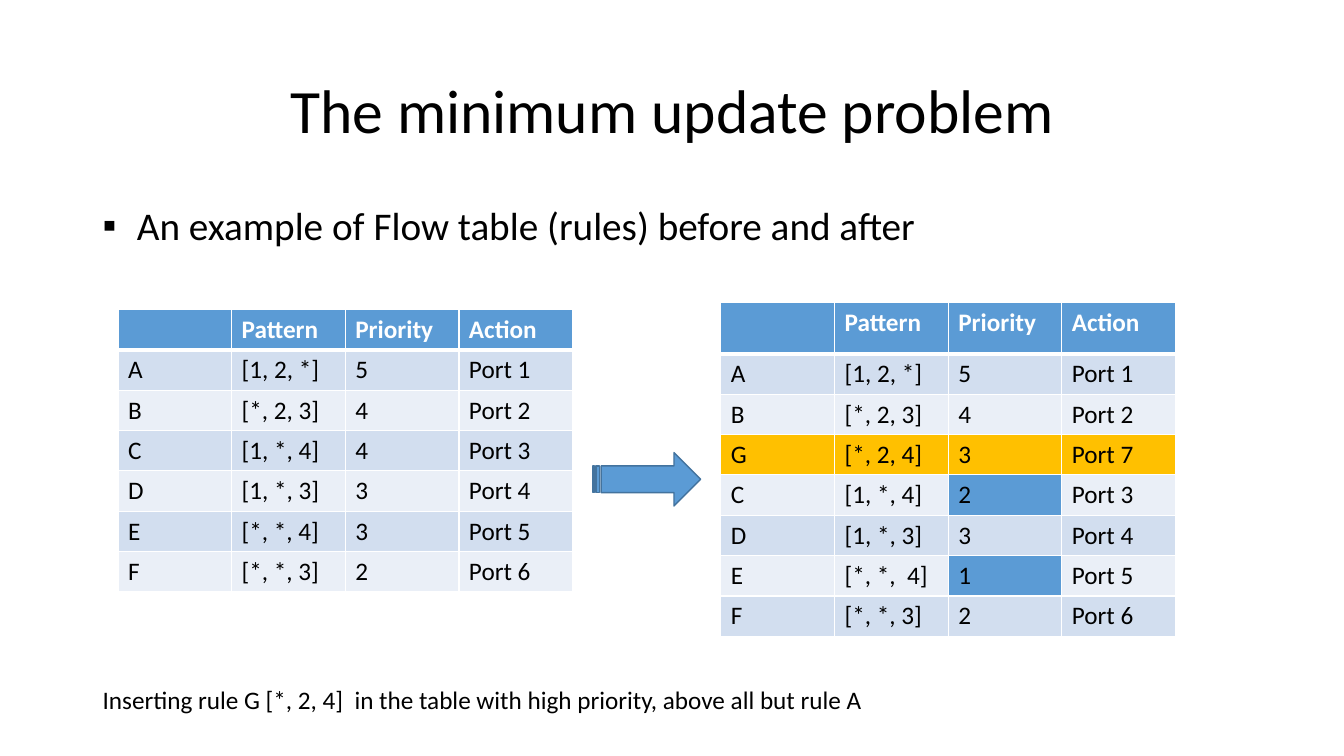
from lxml import etree
from pptx import Presentation
from pptx.dml.color import RGBColor
from pptx.enum.shapes import MSO_SHAPE
from pptx.enum.text import MSO_ANCHOR, PP_ALIGN
from pptx.oxml.ns import qn
from pptx.util import Inches, Pt

STRIPED_ARROW = MSO_SHAPE.STRIPED_RIGHT_ARROW
TOP, MIDDLE = MSO_ANCHOR.TOP, MSO_ANCHOR.MIDDLE
LEFT, CENTER = PP_ALIGN.LEFT, PP_ALIGN.CENTER
FONT = "Calibri"
COLORS = {
    "text": "000000",
    "white": "FFFFFF",
    "accent": "5B9BD5",
    "outline": "43739E",
    "odd": "D2DEEF",
    "even": "EAEFF7",
    "inserted": "FFC000",
}
MARGIN, CONTENT_WIDTH = 0.92, 11.5
TABLE_WIDTH, ROW_HEIGHT = 4.51, 0.4
HEADER = ("", "Pattern", "Priority", "Action")
BEFORE = (
    ("A", "[1, 2, *]", "5", "Port 1"),
    ("B", "[*, 2, 3]", "4", "Port 2"),
    ("C", "[1, *, 4]", "4", "Port 3"),
    ("D", "[1, *, 3]", "3", "Port 4"),
    ("E", "[*, *, 4]", "3", "Port 5"),
    ("F", "[*, *, 3]", "2", "Port 6"),
)
AFTER = (
    ("A", "[1, 2, *]", "5", "Port 1"),
    ("B", "[*, 2, 3]", "4", "Port 2"),
    ("G", "[*, 2, 4]", "3", "Port 7"),
    ("C", "[1, *, 4]", "2", "Port 3"),
    ("D", "[1, *, 3]", "3", "Port 4"),
    ("E", "[*, *,  4]", "1", "Port 5"),
    ("F", "[*, *, 3]", "2", "Port 6"),
)
INSERTED_RULE = "G"
CHANGED_PRIORITIES = ("C", "E")
PRIORITY_COLUMN = HEADER.index("Priority")


def color(name):
    """Return the named colour."""
    return RGBColor.from_string(COLORS[name])


def add_run(paragraph, text, size, color_name="text", bold=False):
    """Add one styled run to a paragraph."""
    run = paragraph.add_run()
    run.text = text
    run.font.name = FONT
    run.font.size = Pt(size)
    run.font.bold = bold
    run.font.color.rgb = color(color_name)


def add_text(slide, box, text, size, anchor=TOP, align=LEFT, spacing=1.0, wrap=True):
    """Add a one-paragraph text box and return its paragraph."""
    shape = slide.shapes.add_textbox(*map(Inches, box))
    frame = shape.text_frame
    frame.word_wrap = wrap
    frame.vertical_anchor = anchor
    paragraph = frame.paragraphs[0]
    paragraph.alignment = align
    paragraph.line_spacing = spacing
    add_run(paragraph, text, size)
    return paragraph


def add_bullet(paragraph, indent):
    """Give a paragraph a square bullet with a hanging indent."""
    properties = paragraph._p.get_or_add_pPr()
    properties.set("marL", str(Inches(indent)))
    properties.set("indent", str(-Inches(indent)))
    etree.SubElement(properties, qn("a:buFont")).set("typeface", "Arial")
    etree.SubElement(properties, qn("a:buChar")).set("char", "▪")


def add_borders(cell, top, bottom):
    """Draw white borders around a cell with the given top and bottom widths."""
    properties = cell._tc.get_or_add_tcPr()
    for side, width in (("L", 1), ("R", 1), ("T", top), ("B", bottom)):
        line = etree.SubElement(properties, qn(f"a:ln{side}"), w=str(Pt(width)))
        fill = etree.SubElement(line, qn("a:solidFill"))
        etree.SubElement(fill, qn("a:srgbClr"), val=COLORS["white"])


def cell_color(row, column, rule):
    """Choose the fill name of a cell from its place and rule."""
    if row == 0:
        return "accent"
    if rule == INSERTED_RULE:
        return "inserted"
    changed = len(AFTER) and column == PRIORITY_COLUMN and rule in CHANGED_PRIORITIES
    return "accent" if changed else ("odd" if row % 2 else "even")


def add_flow_table(slide, left, top, header_height, rules):
    """Add a flow table, marking changes when the inserted rule is present."""
    rows = (HEADER, *rules)
    updated = any(rule[0] == INSERTED_RULE for rule in rules)
    height = header_height + ROW_HEIGHT * len(rules)
    box = map(Inches, (left, top, TABLE_WIDTH, height))
    table = slide.shapes.add_table(len(rows), len(HEADER), *box).table
    for row, values in enumerate(rows):
        table.rows[row].height = Inches(ROW_HEIGHT if row else header_height)
        for column, value in enumerate(values):
            cell = table.cell(row, column)
            add_borders(cell, 3 if row == 1 else 1, 1 if row else 3)
            cell.fill.solid()
            rule = values[0] if updated else ""
            cell.fill.fore_color.rgb = color(cell_color(row, column, rule))
            if value:
                text_color = "text" if row else "white"
                add_run(cell.text_frame.paragraphs[0], value, 18, text_color, row == 0)


def add_update_arrow(slide, box):
    """Add the striped arrow between the two tables."""
    shape = slide.shapes.add_shape(STRIPED_ARROW, *map(Inches, box))
    shape.shadow.inherit = False
    shape.fill.solid()
    shape.fill.fore_color.rgb = color("accent")
    shape.line.color.rgb = color("outline")
    shape.line.width = Pt(1)


def build_update_slide(presentation):
    """Build the slide comparing the flow table before and after."""
    slide = presentation.slides.add_slide(presentation.slide_layouts[6])
    add_text(slide, (MARGIN, 0.4, CONTENT_WIDTH, 1.45),
             "The minimum update problem", 44, MIDDLE, CENTER, 0.9)
    subtitle = add_text(slide, (MARGIN, 2, CONTENT_WIDTH, 0.76),
                        "An example of Flow table (rules) before and after",
                        28, spacing=0.9)
    add_bullet(subtitle, 0.34)
    add_flow_table(slide, 1.17, 3.07, ROW_HEIGHT, BEFORE)
    add_flow_table(slide, 7.15, 3, 0.51, AFTER)
    add_update_arrow(slide, (5.88, 4.49, 1.07, 0.53))
    add_text(slide, (MARGIN, 6.74, 7.77, 0.4),
             "Inserting rule G [*, 2, 4]  in the table with high priority, "
             "above all but rule A", 18, wrap=False)


def main():
    """Create and save the presentation."""
    presentation = Presentation()
    presentation.slide_width = Inches(13.33)
    presentation.slide_height = Inches(7.5)
    build_update_slide(presentation)
    presentation.save("out.pptx")


if __name__ == "__main__":
    main()
